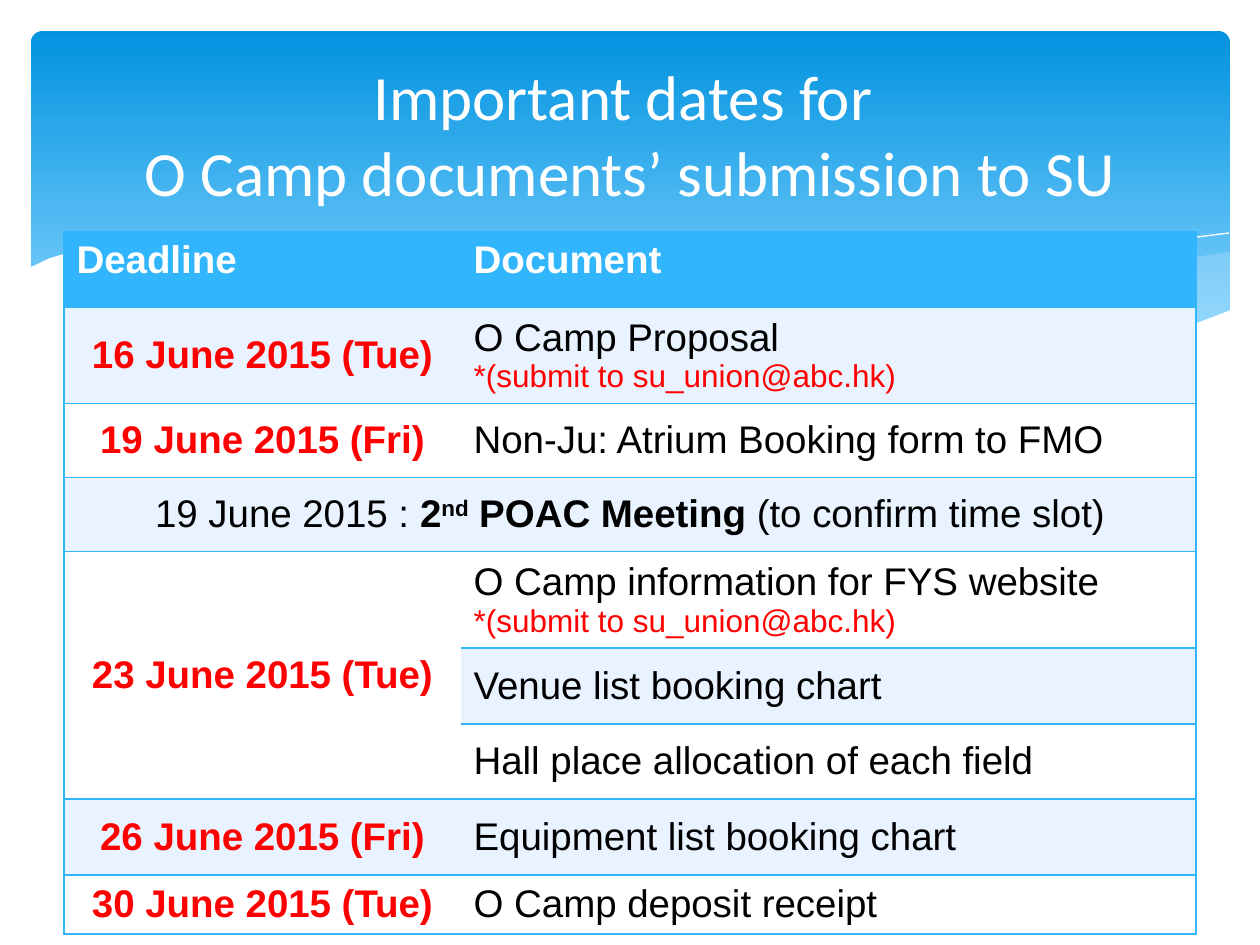
from lxml.etree import SubElement
from pptx import Presentation
from pptx.dml.color import RGBColor
from pptx.enum.shapes import MSO_SHAPE
from pptx.enum.text import MSO_ANCHOR, PP_ALIGN
from pptx.oxml.ns import qn
from pptx.util import Pt

SCALE = 914400 / 126  # EMU in one px
HUES = {"top": "0293E0", "low": "83D3FE", "wave": "C6E7FC", "head": "31B6FD",
        "band": "E8F3FF", "white": "FFFFFF", "black": "000000", "red": "FF0000"}

# Wave outlines in px, relative to the banner's corner
RIGHT = [(1198, 221), (1164, 226), (1127, 234), (1092, 241), (1054, 250), (983, 268),
         (918, 281), (859, 293), (802, 303), (857, 310), (908, 316), (967, 318),
         (1021, 318), (1068, 314), (1109, 308), (1147, 299), (1182, 287), (1199, 280),
         (1199, 221)]
MIDDLE = [(1094, 313), (1024, 303), (946, 289), (859, 271), (762, 249), (705, 235),
          (651, 225), (601, 216), (555, 210), (498, 204), (448, 202), (402, 203),
          (363, 206), (329, 210), (376, 217), (425, 225), (478, 235), (535, 249),
          (637, 271), (726, 290), (807, 304), (881, 314), (943, 318), (1000, 319),
          (1062, 317)]
FALL = [(358, 215), (382, 211), (426, 207), (474, 205), (536, 206), (612, 211),
        (702, 221), (807, 237), (927, 263), (1016, 285), (1112, 312)]
RISE = [(741, 293), (792, 279), (845, 265), (911, 250), (985, 234), (1060, 220),
        (1115, 211), (1167, 206), (1198, 202)]
COVER = [(1200, 279), (1166, 292), (1128, 303), (1072, 313), (1024, 317), (988, 318),
         (928, 316), (861, 309), (785, 299), (699, 284), (603, 263), (532, 246),
         (462, 230), (397, 217), (337, 208), (284, 203), (235, 201), (172, 201),
         (119, 205), (76, 212), (43, 220), (19, 227), (-2, 237), (-2, 384), (1200, 384)]

MAIL = ("*(submit to su_union@abc.hk)", {"size": 18, "hue": "red"})
# Row height, deadline, lines of the document cell
ROWS = [
    (91, "16 June 2015 (Tue)", ["O Camp Proposal", MAIL]),
    (74, "19 June 2015 (Fri)", ["Non-Ju: Atrium Booking form to FMO"]),
    (74, None, None),
    (91, "23 June 2015 (Tue)", ["O Camp information for FYS website", MAIL]),
    (76, None, ["Venue list booking chart"]),
    (75, None, ["Hall place allocation of each field"]),
    (76, "26 June 2015 (Fri)", ["Equipment list booking chart"]),
    (56, "30 June 2015 (Tue)", ["O Camp deposit receipt"]),
]
MEET = ["19 June 2015 : ", ("2", {"bold": True}), ("nd", {"bold": True, "base": 30000}),
        (" POAC Meeting", {"bold": True}), " (to confirm time slot)"]


def px(n):
    return round(n * SCALE)


def rgb(name):
    return RGBColor.from_string(HUES[name])


def write(frame, lines, align=PP_ALIGN.LEFT, **base):
    """Fill a frame; a line is a run or a list of runs, a run is text or (text, format)."""
    for i, line in enumerate(lines):
        para = frame.add_paragraph() if i else frame.paragraphs[0]
        para.alignment = align
        for item in line if isinstance(line, list) else [line]:
            text, own = (item, {}) if isinstance(item, str) else item
            look = {"size": 22, "font": "Arial", "hue": "black", "bold": False, **base, **own}
            run = para.add_run()
            run.text = text
            run.font.size, run.font.name = Pt(look["size"]), look["font"]
            run.font.bold, run.font.color.rgb = look["bold"], rgb(look["hue"])
            if "base" in look:
                run.font._element.set("baseline", str(look["base"]))


def curve(slide, x, y, pts, hue, alpha=None, closed=True):
    pen = slide.shapes.build_freeform(*pts[0], scale=SCALE)
    pen.add_line_segments(pts[1:], close=closed)
    shape = pen.convert_to_shape(px(x), px(y))
    shape.shadow.inherit = False
    if not closed:
        shape.fill.background()
        shape.line.color.rgb, shape.line.width = rgb(hue), 0
        return
    shape.line.fill.background()
    shape.fill.solid()
    shape.fill.fore_color.rgb = rgb(hue)
    if alpha:
        tint = shape.fill._xPr.find(qn("a:solidFill"))[0]
        SubElement(tint, qn("a:alpha"), val=str(alpha * 1000))


def banner(slide, x, y, w, h):
    # Blue panel
    panel = slide.shapes.add_shape(MSO_SHAPE.ROUNDED_RECTANGLE, px(x), px(y), px(w), px(h))
    panel.adjustments[0] = 0.034
    panel.shadow.inherit = False
    panel.line.fill.background()
    panel.fill.gradient()
    panel.fill.gradient_angle = 270
    for stop, hue, pos in zip(panel.fill.gradient_stops, ("top", "low"), (0, 0.9)):
        stop.color.rgb, stop.position = rgb(hue), pos
    # Waves, then the white cover below them
    curve(slide, x, y, RIGHT, "wave", 29)
    curve(slide, x, y, MIDDLE, "wave", 40)
    for pts in (FALL, RISE):
        curve(slide, x, y, pts, "white", closed=False)
    curve(slide, x, y, COVER, "white")


def title(slide, x, y, w, h):
    frame = slide.shapes.add_textbox(px(x), px(y), px(w), px(h)).text_frame
    frame.word_wrap, frame.vertical_anchor = True, MSO_ANCHOR.MIDDLE
    write(frame, ["Important dates for ", "O Camp documents’ submission to SU"],
          PP_ALIGN.CENTER, size=36, font="Calibri", hue="white")


def edge(cell, sides):
    props = cell._tc.get_or_add_tcPr()
    for side in "LRTB":
        line = SubElement(props, qn(f"a:ln{side}"), w=str(Pt(1)))
        if side in sides:
            fill = SubElement(line, qn("a:solidFill"))
            SubElement(fill, qn("a:srgbClr"), val=HUES["head"])
        else:
            SubElement(line, qn("a:noFill"))


def dates(slide, x, y, cols, head):
    tall = [head] + [row[0] for row in ROWS]
    grid = slide.shapes.add_table(len(tall), 2, px(x), px(y), px(sum(cols)), px(sum(tall))).table
    for col, w in zip(grid.columns, cols):
        col.width = px(w)
    for row, h in zip(grid.rows, tall):
        row.height = px(h)
    grid.cell(3, 0).merge(grid.cell(3, 1))
    grid.cell(4, 0).merge(grid.cell(6, 0))

    # Borders and fills
    for r in range(len(tall)):
        for c in range(2):
            cell = grid.cell(r, c)
            sides = "LR"[c] + ("" if cell.is_spanned else "TB")
            edge(cell, sides + ("R" if r == 3 else ""))
            cell.fill.solid()
            plain = r % 2 == 0 or (r == 5 and c == 0)
            cell.fill.fore_color.rgb = rgb("head" if r == 0 else "white" if plain else "band")
            cell.vertical_anchor = MSO_ANCHOR.MIDDLE if r else MSO_ANCHOR.TOP

    # Wording
    for c, name in enumerate(("Deadline", "Document")):
        write(grid.cell(0, c).text_frame, [name], hue="white", bold=True)
    for r, (_, day, lines) in enumerate(ROWS, 1):
        if day:
            write(grid.cell(r, 0).text_frame, [day], PP_ALIGN.CENTER, hue="red", bold=True)
        if lines:
            write(grid.cell(r, 1).text_frame, lines)
    write(grid.cell(3, 0).text_frame, [MEET], PP_ALIGN.CENTER)


def main():
    deck = Presentation()
    deck.slide_width, deck.slide_height = px(1260), px(945)
    slide = deck.slides.add_slide(deck.slide_layouts[6])
    banner(slide, 31, 31, 1199, 340)
    title(slide, 63, 47, 1134, 173)
    dates(slide, 64, 232, (397, 735), 75)
    deck.save("out.pptx")


if __name__ == "__main__":
    main()
